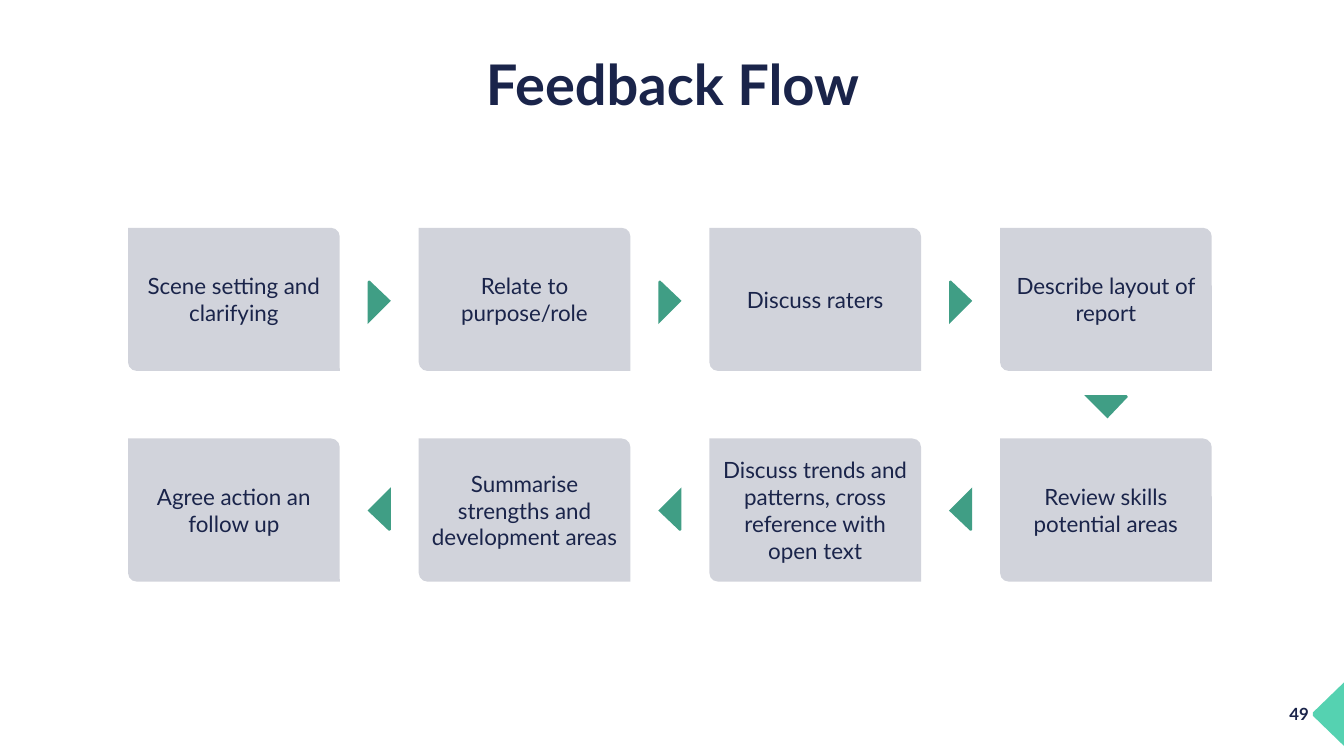
import pptx
import pptx.util
import pptx.dml.color
import pptx.enum.shapes
import pptx.enum.text

NAVY, GREY, GREEN, MINT = "1A244A", "D1D3DB", "409E85", "55D2B1"
STEPS = [
    ["Scene setting and clarifying", "Relate to purpose/role",
     "Discuss raters", "Describe layout of report"],
    ["Agree action an follow up", "Summarise strengths and development areas",
     "Discuss trends and patterns, cross reference with open text",
     "Review skills potential areas"],
]
COLUMN_PITCH, ROW_PITCH = 2.883, 2.09
CARD_WIDTH, CARD_HEIGHT = 2.1, 1.42
ARROW_WIDTH, ARROW_HEIGHT = 0.43, 0.23
ARROW_OUTLINE = [(0, 0.21), (0.2, 0), (0.43, 0.23), (0.01, 0.23), (0, 0.22)]
ARROW_ROW_CENTRES = (0.74, 2.79)
CORNER_OUTLINE = [(0.32, 0.65), (0, 0.34), (0, 0.31), (0.32, 0)]
RIGHT, DOWN, LEFT = 90, 180, 270


def inches(value):
    return pptx.util.Inches(value)


def colour(code):
    return pptx.dml.color.RGBColor.from_string(code)


def paint(shape, code):
    shape.shadow.inherit = False
    shape.fill.solid()
    shape.fill.fore_color.rgb = colour(code)
    shape.line.fill.background()


def write(box, text, size=16, bold=False, align="CENTER", anchor="MIDDLE",
          margin=0.1, spacing=None):
    frame = box.text_frame
    frame.word_wrap = True
    frame.auto_size = pptx.enum.text.MSO_AUTO_SIZE.NONE
    frame.vertical_anchor = pptx.enum.text.MSO_ANCHOR[anchor]
    frame.margin_left = frame.margin_right = inches(margin)
    para = frame.paragraphs[0]
    para.alignment = pptx.enum.text.PP_ALIGN[align]
    para.line_spacing = spacing
    span = para.add_run()
    span.text = text
    span.font.name = "Lato"
    span.font.size = pptx.util.Pt(size)
    span.font.bold = bold
    span.font.color.rgb = colour(NAVY)


def draw_outline(page, left, top, outline, code):
    points = [(inches(left + x), inches(top + y)) for x, y in outline]
    builder = page.shapes.build_freeform(*points[0])
    builder.add_line_segments(points[1:], close=True)
    shape = builder.convert_to_shape()
    paint(shape, code)
    return shape


def draw_title(page, left, top, width, height):
    title = page.shapes.title
    title.left, title.top = inches(left), inches(top)
    title.width, title.height = inches(width), inches(height)
    write(title, "Feedback Flow", size=40, bold=True, spacing=0.9)


def draw_page_number(page, left, top):
    draw_outline(page, left + 0.64, top, CORNER_OUTLINE, MINT)
    box = page.shapes.add_textbox(inches(left), inches(top + 0.17),
                                  inches(0.7), inches(0.3))
    write(box, "49", size=12, bold=True, align="RIGHT", anchor="TOP")


def draw_card(page, left, top, text):
    card = page.shapes.add_shape(
        pptx.enum.shapes.MSO_SHAPE.ROUND_2_DIAG_RECTANGLE,
        inches(left), inches(top), inches(CARD_WIDTH), inches(CARD_HEIGHT))
    card.adjustments[0] = 0
    card.adjustments[1] = 0.061
    paint(card, GREY)
    write(card, text, margin=0.07)


def draw_arrow(page, centre_x, centre_y, direction):
    arrow = draw_outline(page, centre_x - ARROW_WIDTH / 2,
                         centre_y - ARROW_HEIGHT / 2, ARROW_OUTLINE, GREEN)
    arrow.rotation = direction


def draw_flow(page, left, top):
    for row, texts in enumerate(STEPS):
        for column, text in enumerate(texts):
            draw_card(page, left + column * COLUMN_PITCH,
                      top + row * ROW_PITCH, text)
    first_gap = left + (CARD_WIDTH + COLUMN_PITCH) / 2
    for centre, direction in zip(ARROW_ROW_CENTRES, (RIGHT, LEFT)):
        for column in range(len(STEPS[0]) - 1):
            draw_arrow(page, first_gap + column * COLUMN_PITCH,
                       top + centre, direction)
    last_column = left + (len(STEPS[0]) - 1) * COLUMN_PITCH
    draw_arrow(page, last_column + CARD_WIDTH / 2,
               top + (CARD_HEIGHT + ROW_PITCH) / 2 + 0.02, DOWN)


def main():
    deck = pptx.Presentation()
    deck.slide_width, deck.slide_height = inches(13.33), inches(7.5)
    page = deck.slides.add_slide(deck.slide_layouts[5])
    draw_page_number(page, 12.38, 6.76)
    draw_title(page, 0.92, 0.47, 11.5, 0.79)
    draw_flow(page, 1.27, 2.26)
    deck.save("out.pptx")


if __name__ == "__main__":
    main()
